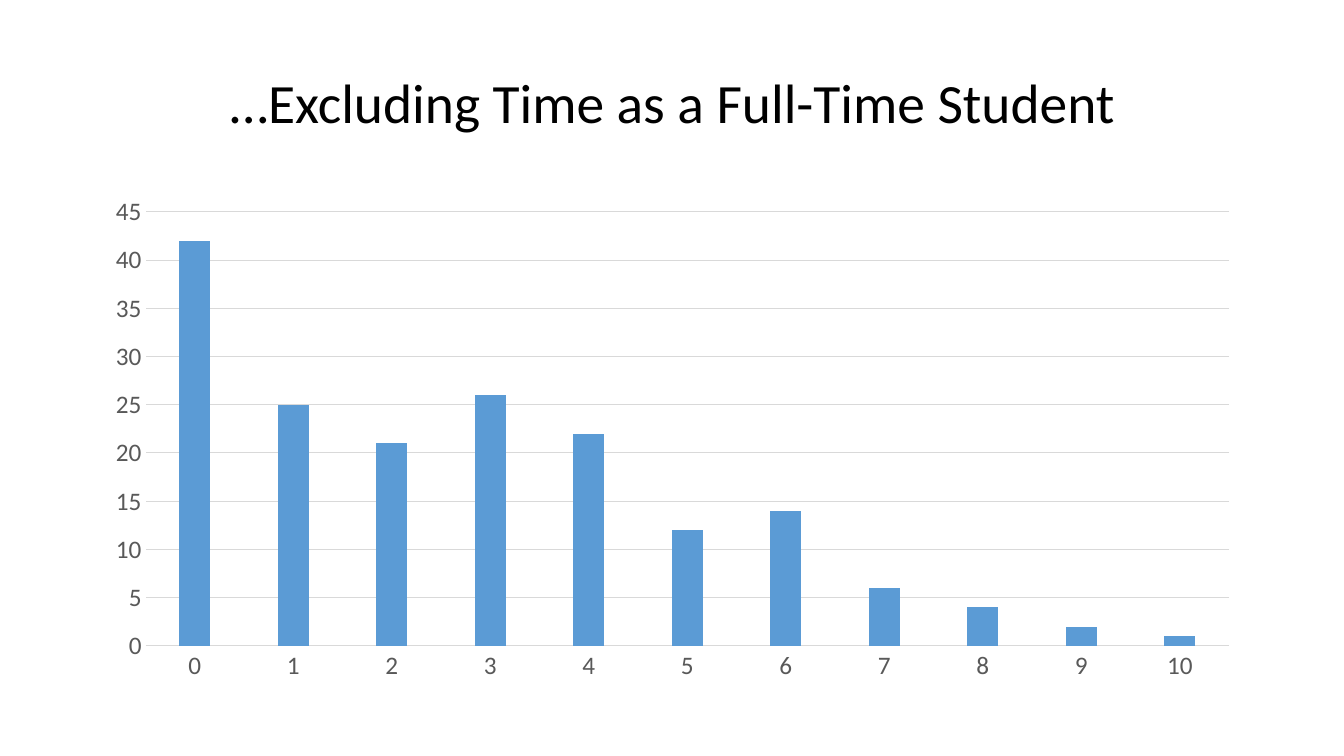
from pptx import Presentation
from pptx.chart.data import CategoryChartData
from pptx.dml.color import RGBColor
from pptx.enum.chart import XL_CHART_TYPE as CHART, XL_TICK_MARK as TICK
from pptx.enum.text import MSO_ANCHOR as ANCHOR, PP_ALIGN as ALIGN
from pptx.util import Inches, Pt

FONT = "Calibri"
COUNTS = (42, 25, 21, 26, 22, 12, 14, 6, 4, 2, 1)


def rgb(value):
    """Turn a hex string into a colour."""
    return RGBColor.from_string(value)


def style_font(font, size, color):
    """Set the typeface, size and colour of a font."""
    font.name, font.size = FONT, Pt(size)
    font.color.rgb = rgb(color)


def style_line(line):
    """Make a chart line thin and light grey."""
    line.color.rgb = rgb("D9D9D9")
    line.width = Pt(0.75)


def add_title(s, x, y, w, h, text):
    """Place the centred title, with an open second line below it."""
    tf = s.shapes.add_textbox(Inches(x), Inches(y), Inches(w), Inches(h)).text_frame
    tf.word_wrap = True
    tf.vertical_anchor = ANCHOR.MIDDLE
    p = tf.paragraphs[0]
    p.alignment, p.line_spacing = ALIGN.CENTER, 0.9
    style_font(p.font, 39.6, "000000")
    r = p.add_run()
    r.text = text
    style_font(r.font, 39.6, "000000")
    p.add_line_break()


def add_column_chart(s, x, y, w, h, counts):
    """Place the column chart with one column per whole number from zero."""
    data = CategoryChartData()
    data.categories = [str(i) for i in range(len(counts))]
    data.add_series("Series 1", counts)
    chart = s.shapes.add_chart(
        CHART.COLUMN_CLUSTERED, Inches(x), Inches(y), Inches(w), Inches(h), data
    ).chart
    chart.has_legend = chart.has_title = False
    style_font(chart.font, 10, "000000")

    plot = chart.plots[0]
    plot.gap_width, plot.overlap = 219, -27
    plot.vary_by_categories = False
    fill = plot.series[0].format.fill
    fill.solid()
    fill.fore_color.rgb = rgb("5B9BD5")

    cat_axis, val_axis = chart.category_axis, chart.value_axis
    for axis in (cat_axis, val_axis):
        axis.major_tick_mark = axis.minor_tick_mark = TICK.NONE
        style_font(axis.tick_labels.font, 18, "595959")
    style_line(cat_axis.format.line)
    val_axis.format.line.fill.background()
    val_axis.minimum_scale, val_axis.maximum_scale, val_axis.major_unit = 0, 45, 5
    val_axis.has_major_gridlines = True
    style_line(val_axis.major_gridlines.format.line)


def main():
    """Build and save the slide."""
    prs = Presentation()
    prs.slide_width, prs.slide_height = Inches(13.33), Inches(7.5)
    s = prs.slides.add_slide(prs.slide_layouts[6])
    add_title(s, 0.92, 0.91, 11.5, 0.94, "…Excluding Time as a Full-Time Student")
    add_column_chart(s, 0.92, 1.85, 11.5, 5, COUNTS)
    prs.save("out.pptx")


if __name__ == "__main__":
    main()
